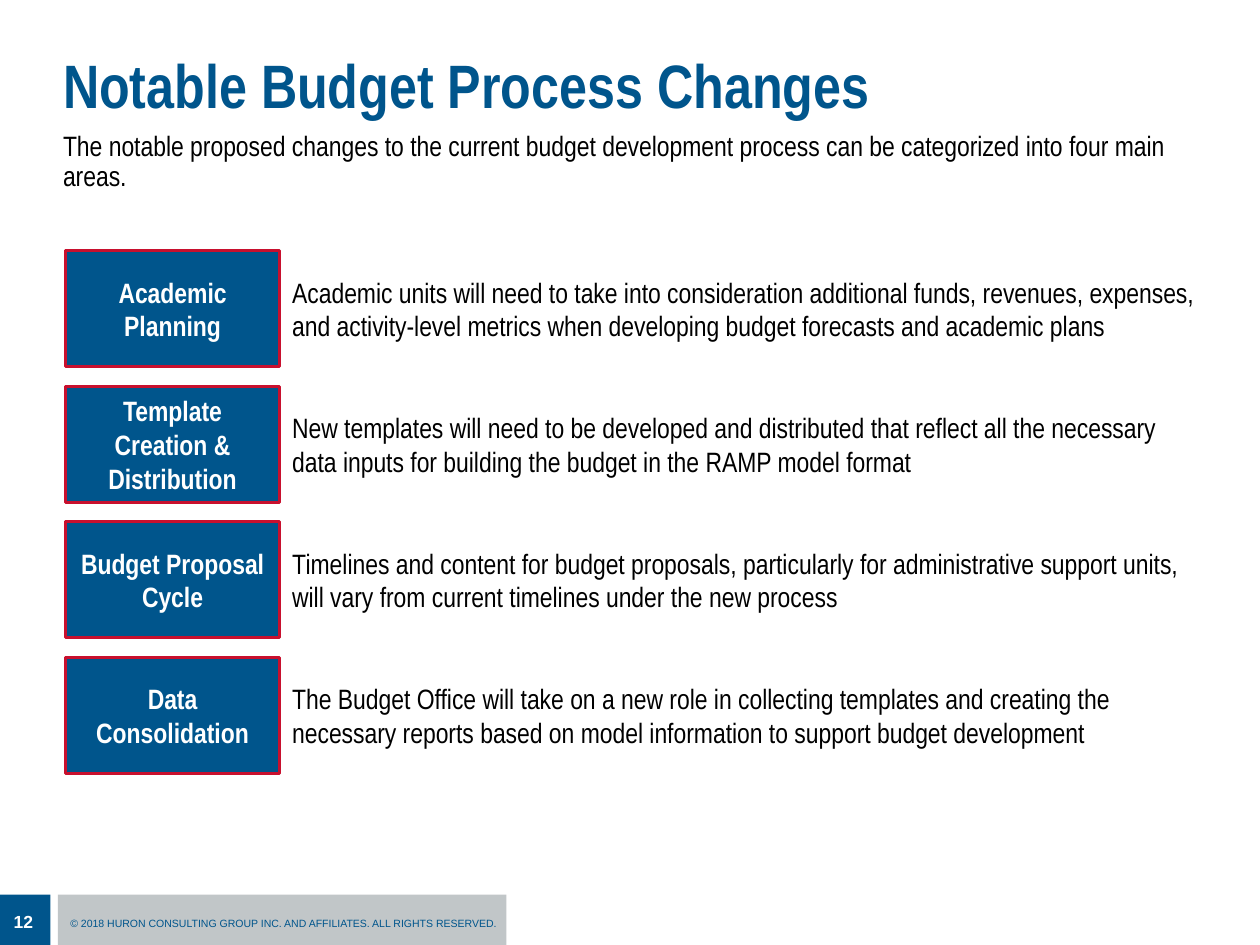
from lxml import etree
from pptx import Presentation
from pptx import util as u
from pptx.dml.color import RGBColor
from pptx.enum import shapes, text
from pptx.oxml import ns

COLORS = {"blue": "00558C", "red": "C8102E", "gray": "C1C6C8",
          "white": "FFFFFF", "black": "000000"}
CHANGES = [
    ("Academic Planning",
     "Academic units will need to take into consideration additional funds, revenues, "
     "expenses, and activity-level metrics when developing budget forecasts and academic plans"),
    ("Template Creation & Distribution",
     "New templates will need to be developed and distributed that reflect all the necessary "
     "data inputs for building the budget in the RAMP model format"),
    ("Budget Proposal Cycle",
     "Timelines and content for budget proposals, particularly for administrative support "
     "units, will vary from current timelines under the new process"),
    ("Data Consolidation",
     "The Budget Office will take on a new role in collecting templates and creating the "
     "necessary reports based on model information to support budget development"),
]
LABEL_LEFT, LABEL_WIDTH, TEXT_WIDTH = 0.52, 1.7, 7.39
ROW_TOP, ROW_HEIGHT, ROW_PITCH = 1.99, 0.92, 1.076
FOOTER_TOP, FOOTER_HEIGHT = 7.1, 0.4


def add_block(left, top, width, height, fill, line=None):
    block = slide.shapes.add_shape(shapes.MSO_SHAPE.RECTANGLE, u.Inches(left), u.Inches(top),
                                   u.Inches(width), u.Inches(height))
    block.shadow.inherit = False
    block.fill.solid()
    block.fill.fore_color.rgb = RGBColor.from_string(COLORS[fill])
    if line:
        block.line.color.rgb = RGBColor.from_string(COLORS[line])
        block.line.width = u.Pt(1.75)
    else:
        block.line.fill.background()
    return block


def write(shape, words, size, color, bold=False, font="Arial Narrow", inset=(0.1, 0.05),
          align=text.PP_ALIGN.LEFT, anchor=text.MSO_ANCHOR.MIDDLE, wrap=True):
    """Fill a shape with one paragraph; inset is (sides, top and bottom) in inches."""
    frame = shape.text_frame
    frame.text = words
    frame.word_wrap = wrap
    frame.auto_size = text.MSO_AUTO_SIZE.NONE
    frame.vertical_anchor = anchor
    frame.margin_left = frame.margin_right = u.Inches(inset[0])
    frame.margin_top = frame.margin_bottom = u.Inches(inset[1])
    paragraph = frame.paragraphs[0]
    paragraph.alignment = align
    paragraph.space_before = u.Pt(0)
    paragraph.font.name = font
    paragraph.font.size = u.Pt(size)
    paragraph.font.bold = bold
    paragraph.font.color.rgb = RGBColor.from_string(COLORS[color])
    return paragraph


presentation = Presentation()
presentation.slide_width, presentation.slide_height = u.Inches(10), u.Inches(7.5)
slide = presentation.slides.add_slide(presentation.slide_layouts[1])

# Title and introduction
title, introduction = slide.placeholders
title.left, title.top, title.width, title.height = map(u.Inches, (0.4, 0.4, 9.46, 0.53))
write(title, "Notable Budget Process Changes", 35, "blue", bold=True, inset=(0.1, 0.1))

introduction.left, introduction.top, introduction.width, introduction.height = map(
    u.Inches, (0.4, 1, 9.42, 0.88))
introduction.text_frame.text = ""
paragraph = write(
    introduction,
    "The notable proposed changes to the current budget development process can be "
    "categorized into four main areas.", 16, "black", anchor=text.MSO_ANCHOR.TOP)
paragraph.line_spacing = 0.9
properties = paragraph._p.get_or_add_pPr()
properties.set("marL", "0")
properties.set("indent", "0")
no_bullet = etree.Element(ns.qn("a:buNone"))
properties.find(ns.qn("a:defRPr")).addprevious(no_bullet)

# One row per change: label on the left, explanation on the right
for row, (label, explanation) in enumerate(CHANGES):
    top = ROW_TOP + row * ROW_PITCH
    description = slide.shapes.add_textbox(
        u.Inches(LABEL_LEFT + LABEL_WIDTH), u.Inches(top),
        u.Inches(TEXT_WIDTH), u.Inches(ROW_HEIGHT))
    write(description, explanation, 16, "black").space_after = u.Pt(6)
    block = add_block(LABEL_LEFT, top, LABEL_WIDTH, ROW_HEIGHT, "blue", "red")
    write(block, label, 16, "white", bold=True, inset=(0.08, 0.08),
          align=text.PP_ALIGN.CENTER)

# Footer
add_block(0.46, FOOTER_TOP, 3.56, FOOTER_HEIGHT, "gray")
rights = slide.shapes.add_textbox(u.Inches(0.46), u.Inches(7.23), u.Inches(3.67), u.Inches(0.2))
write(rights, "© 2018 HURON CONSULTING GROUP INC. AND AFFILIATES. ALL RIGHTS RESERVED.",
      6, "blue", font="Arial", anchor=text.MSO_ANCHOR.TOP, wrap=False)
page_block = add_block(0, FOOTER_TOP, FOOTER_HEIGHT, FOOTER_HEIGHT, "blue")
page_number = slide.shapes.add_textbox(u.Inches(0.01), u.Inches(7.18),
                                       u.Inches(0.4), u.Inches(0.27))
write(page_number, "12", 10, "white", bold=True, font="Arial")

presentation.save("out.pptx")
